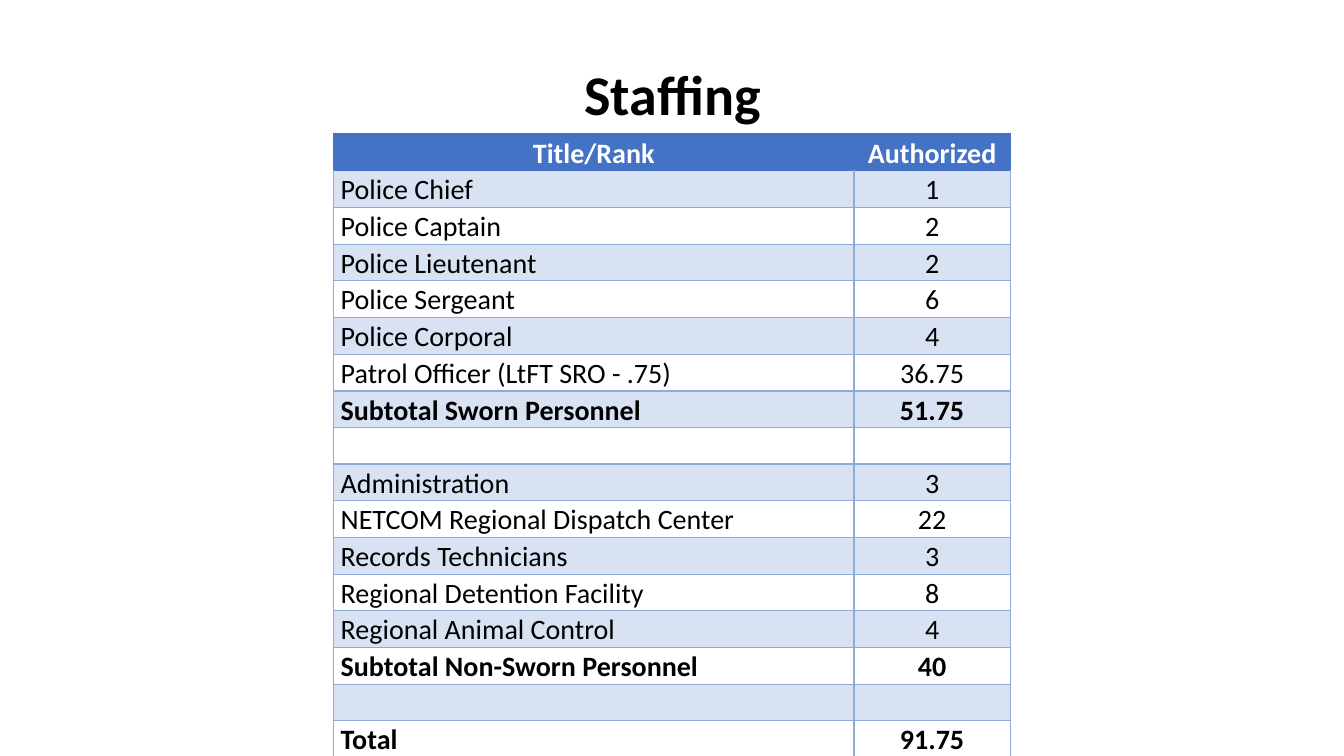
"""Build the police staffing slide with its table of authorized posts."""
from lxml import etree
from pptx import Presentation
from pptx.dml.color import RGBColor
from pptx.enum.text import MSO_ANCHOR, PP_ALIGN
from pptx.oxml.ns import qn
from pptx.util import Inches, Pt

LEFT, CENTER = PP_ALIGN.LEFT, PP_ALIGN.CENTER
MIDDLE = MSO_ANCHOR.MIDDLE
BLUE, EDGE, PALE, WHITE, BLACK = "4472C4", "8EAADB", "D9E2F3", "FFFFFF", "000000"

STAFF = [
    ("Title/Rank", "Authorized"),
    ("Police Chief", "1"),
    ("Police Captain", "2"),
    ("Police Lieutenant", "2"),
    ("Police Sergeant", "6"),
    ("Police Corporal", "4"),
    ("Patrol Officer (LtFT SRO - .75)", "36.75"),
    ("Subtotal Sworn Personnel", "51.75"),
    ("", ""),
    ("Administration", "3"),
    ("NETCOM Regional Dispatch Center", "22"),
    ("Records Technicians", "3"),
    ("Regional Detention Facility", "8"),
    ("Regional Animal Control", "4"),
    ("Subtotal Non-Sworn Personnel", "40"),
    ("", ""),
    ("Total", "91.75"),
]


def write(frame, text, size=20, color=BLACK, bold=False, align=LEFT, space=1.07):
    para = frame.paragraphs[0]
    para.alignment = align
    para.line_spacing = space
    run = para.add_run()
    run.text = text
    font = run.font
    font.name, font.size, font.bold = "Calibri", Pt(size), bold
    font.color.rgb = RGBColor.from_string(color)


def border(cell, colors):
    props = cell._tc.get_or_add_tcPr()
    for spot, (side, color) in enumerate(zip("LRTB", colors)):
        line = etree.Element(qn(f"a:ln{side}"), w=str(Pt(1)))
        fill = etree.SubElement(line, qn("a:solidFill"))
        etree.SubElement(fill, qn("a:srgbClr"), val=color)
        props.insert(spot, line)


deck = Presentation()
deck.slide_width, deck.slide_height = Inches(13.33), Inches(7.5)
slide = deck.slides.add_slide(deck.slide_layouts[5])

title = slide.shapes.title
title.left, title.top = Inches(0.92), Inches(0.33)
title.width, title.height = Inches(11.5), Inches(1.27)
title.text_frame.vertical_anchor = MIDDLE
write(title.text_frame, "Staffing", size=40, bold=True, align=CENTER, space=0.9)

height = Inches(0.36)
table = slide.shapes.add_table(len(STAFF), 2, Inches(3.31), Inches(1.33),
                               Inches(6.71), height * len(STAFF)).table
table.columns[0].width = Inches(5.16)
table.columns[1].width = Inches(1.55)

for row, texts in enumerate(STAFF):
    table.rows[row].height = height
    head = row == 0
    bold = head or "otal" in texts[0]
    for col, text in enumerate(texts):
        cell = table.cell(row, col)
        cell.margin_left = cell.margin_right = Inches(0.07)
        cell.margin_top = cell.margin_bottom = 0
        cell.fill.solid()
        shade = BLUE if head else PALE if row % 2 else WHITE
        cell.fill.fore_color.rgb = RGBColor.from_string(shade)
        edge = BLUE if head else EDGE
        border(cell, (edge, edge, BLUE if row < 2 else EDGE, edge))
        if text:
            write(cell.text_frame, text, color=WHITE if head else BLACK, bold=bold,
                  align=CENTER if head or col else LEFT)

deck.save("out.pptx")
